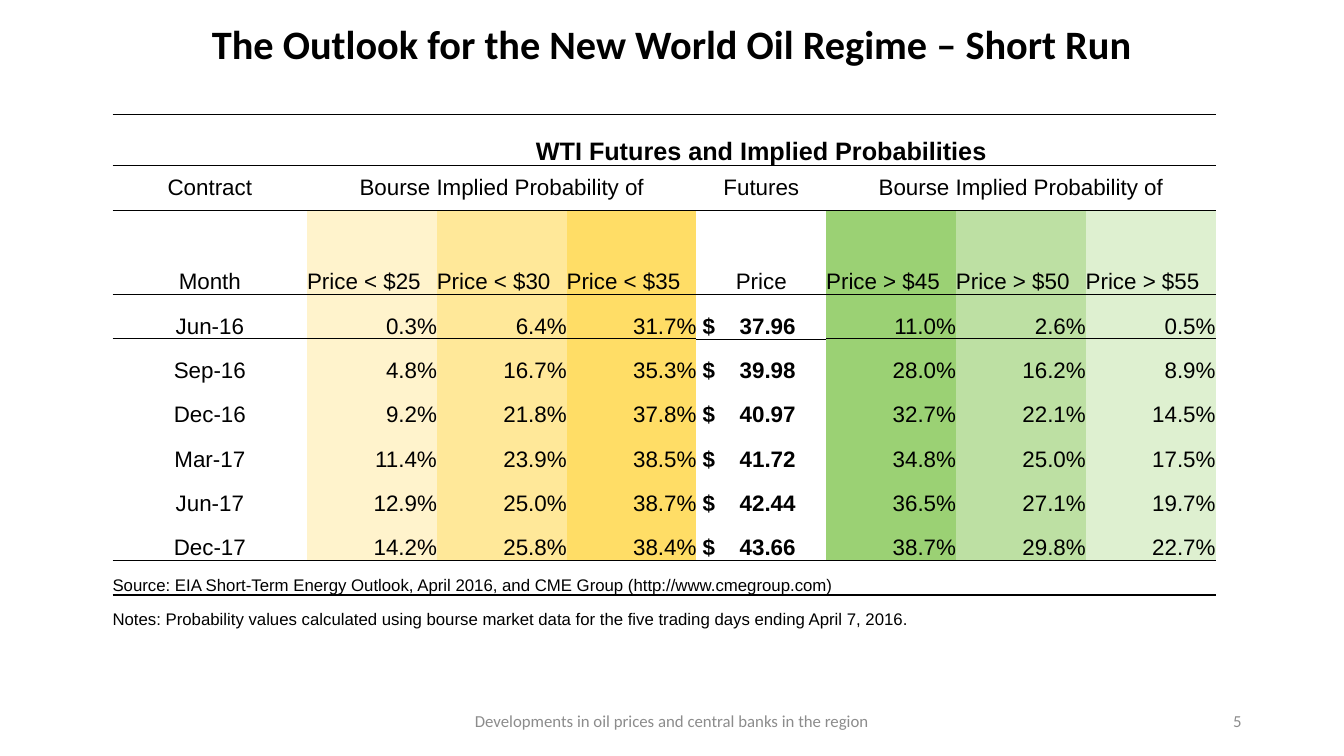
from lxml.etree import SubElement
from pptx import Presentation
from pptx.dml.color import RGBColor
from pptx.enum.text import MSO_ANCHOR, PP_ALIGN
from pptx.oxml import parse_xml
from pptx.oxml.ns import nsdecls, qn
from pptx.util import Pt

BLACK = RGBColor(0x00, 0x00, 0x00)
GRAY = RGBColor(0x8C, 0x8C, 0x8C)
COLUMN_FILLS = {
    1: RGBColor(0xFF, 0xF3, 0xCC),
    2: RGBColor(0xFF, 0xE8, 0x99),
    3: RGBColor(0xFF, 0xDD, 0x66),
    5: RGBColor(0x9B, 0xD1, 0x74),
    6: RGBColor(0xBD, 0xE0, 0xA3),
    7: RGBColor(0xDE, 0xF0, 0xD0),
}
PLAIN_STYLE = "{2D5ABB26-0587-4C30-8999-92F81FD0307C}"
FUTURES_COLUMN = 4
MONTH_ROW, FIRST_DATA_ROW, SOURCE_ROW = 2, 3, 9
ROW_HEIGHTS = [36.3, 31.7, 60.5] + [31.7] * 6 + [24.5] * 2
CONTRACT_WIDTH = 139
RULES = {0: 0.5, 1: 0.5, 3: 1, 9: 1}
SPANS = {(0, 1): 7, (1, 1): 3, (1, 5): 3, (9, 0): 7, (10, 0): 7}

PROBABILITY = "Bourse Implied Probability of"
ROWS = [
    ["", "WTI Futures and Implied Probabilities"],
    ["Contract", PROBABILITY, "", "", "Futures", PROBABILITY],
    ["Month", "Price < $25", "Price < $30", "Price < $35", "Price",
     "Price > $45", "Price > $50", "Price > $55"],
    ["Jun-16", "0.3%", "6.4%", "31.7%", "$\t37.96", "11.0%", "2.6%", "0.5%"],
    ["Sep-16", "4.8%", "16.7%", "35.3%", "$\t39.98", "28.0%", "16.2%", "8.9%"],
    ["Dec-16", "9.2%", "21.8%", "37.8%", "$\t40.97", "32.7%", "22.1%", "14.5%"],
    ["Mar-17", "11.4%", "23.9%", "38.5%", "$\t41.72", "34.8%", "25.0%", "17.5%"],
    ["Jun-17", "12.9%", "25.0%", "38.7%", "$\t42.44", "36.5%", "27.1%", "19.7%"],
    ["Dec-17", "14.2%", "25.8%", "38.4%", "$\t43.66", "38.7%", "29.8%", "22.7%"],
    ["Source: EIA Short-Term Energy Outlook, April 2016, and CME Group (http://www.cmegroup.com)"],
    ["Notes: Probability values calculated using bourse market data for the five trading days "
     "ending April 7, 2016."],
]


def format_para(para, name, size, color, align, bold=False):
    para.alignment = align
    for span in para.runs:
        span.font.name = name
        span.font.size = Pt(size)
        span.font.bold = bold
        span.font.color.rgb = color


def place_title(slide, left, top, width, height):
    title = slide.shapes.title
    title.left, title.top, title.width, title.height = map(Pt, (left, top, width, height))
    frame = title.text_frame
    frame.text = "The Outlook for the New World Oil Regime – Short Run"
    frame.vertical_anchor = MSO_ANCHOR.MIDDLE
    frame.paragraphs[0].line_spacing = 0.9
    format_para(frame.paragraphs[0], "Calibri", 28.8, BLACK, PP_ALIGN.CENTER, True)


def add_footer_text(slide, text, align, left, top, width, height):
    box = slide.shapes.add_textbox(Pt(left), Pt(top), Pt(width), Pt(height))
    frame = box.text_frame
    frame.word_wrap = True
    frame.vertical_anchor = MSO_ANCHOR.MIDDLE
    frame.text = text
    format_para(frame.paragraphs[0], "Calibri", 12, GRAY, align)


def add_rule(cell, side, weight):
    cell._tc.get_or_add_tcPr().append(parse_xml(
        f'<a:{side} {nsdecls("a")} w="{Pt(weight)}"><a:solidFill>'
        f'<a:srgbClr val="{BLACK}"/></a:solidFill></a:{side}>'))


def draw_rules(cell, row, column):
    for side, edge in (("lnT", row), ("lnB", row + 1)):
        if edge in RULES:
            thin = edge == MONTH_ROW + 1 and column == FUTURES_COLUMN
            add_rule(cell, side, 0.5 if thin else RULES[edge])


def cell_alignment(row, column):
    if row >= SOURCE_ROW:
        return PP_ALIGN.LEFT
    if column == 0 or row < MONTH_ROW:
        return PP_ALIGN.CENTER
    if column == FUTURES_COLUMN:
        return PP_ALIGN.CENTER if row == MONTH_ROW else PP_ALIGN.LEFT
    return PP_ALIGN.LEFT if row == MONTH_ROW else PP_ALIGN.RIGHT


def fill_cell(cell, row, column, text):
    cell.margin_left = cell.margin_right = cell.margin_top = cell.margin_bottom = 0
    cell.vertical_anchor = MSO_ANCHOR.MIDDLE if row == 1 else MSO_ANCHOR.BOTTOM
    draw_rules(cell, row, column)
    if MONTH_ROW <= row < SOURCE_ROW and column in COLUMN_FILLS:
        cell.fill.solid()
        cell.fill.fore_color.rgb = COLUMN_FILLS[column]
    else:
        cell.fill.background()
    if not text:
        return
    cell.text_frame.text = text
    para = cell.text_frame.paragraphs[0]
    price = "\t" in text
    if price:
        cell.margin_left = Pt(4.4)
        tabs = SubElement(para._p.get_or_add_pPr(), qn("a:tabLst"))
        SubElement(tabs, qn("a:tab"), pos=str(Pt(26.5)), algn="l")
    size = 18 if row == 0 else 12 if row >= SOURCE_ROW else 16
    format_para(para, "Arial", size, BLACK, cell_alignment(row, column), row == 0 or price)


def add_futures_table(slide, left, top, width):
    columns = len(ROWS[MONTH_ROW])
    frame = slide.shapes.add_table(len(ROWS), columns, Pt(left), Pt(top),
                                   Pt(width), Pt(sum(ROW_HEIGHTS)))
    table = frame.table
    table.first_row = table.horz_banding = False
    table._tbl.tblPr.find(qn("a:tableStyleId")).text = PLAIN_STYLE
    for index, column in enumerate(table.columns):
        column.width = Pt(CONTRACT_WIDTH if index == 0
                          else (width - CONTRACT_WIDTH) / (columns - 1))
    for row, height in enumerate(ROW_HEIGHTS):
        table.rows[row].height = Pt(height)
        texts = ROWS[row] + [""] * (columns - len(ROWS[row]))
        for column, text in enumerate(texts):
            fill_cell(table.cell(row, column), row, column, text)
    for (row, column), count in SPANS.items():
        table.cell(row, column).merge(table.cell(row, column + count - 1))


def build_outlook_slide(deck):
    slide = deck.slides.add_slide(deck.slide_layouts[5])
    place_title(slide, 66, 11.5, 828, 43.2)
    add_futures_table(slide, 80.4, 81.9, 787.9)
    add_footer_text(slide, "Developments in oil prices and central banks in the region",
                    PP_ALIGN.CENTER, 318, 500.5, 324, 28.8)
    add_footer_text(slide, "5", PP_ALIGN.RIGHT, 678, 500.5, 216, 28.8)


def main():
    deck = Presentation()
    deck.slide_width, deck.slide_height = Pt(960), Pt(540)
    build_outlook_slide(deck)
    deck.save("out.pptx")


if __name__ == "__main__":
    main()
